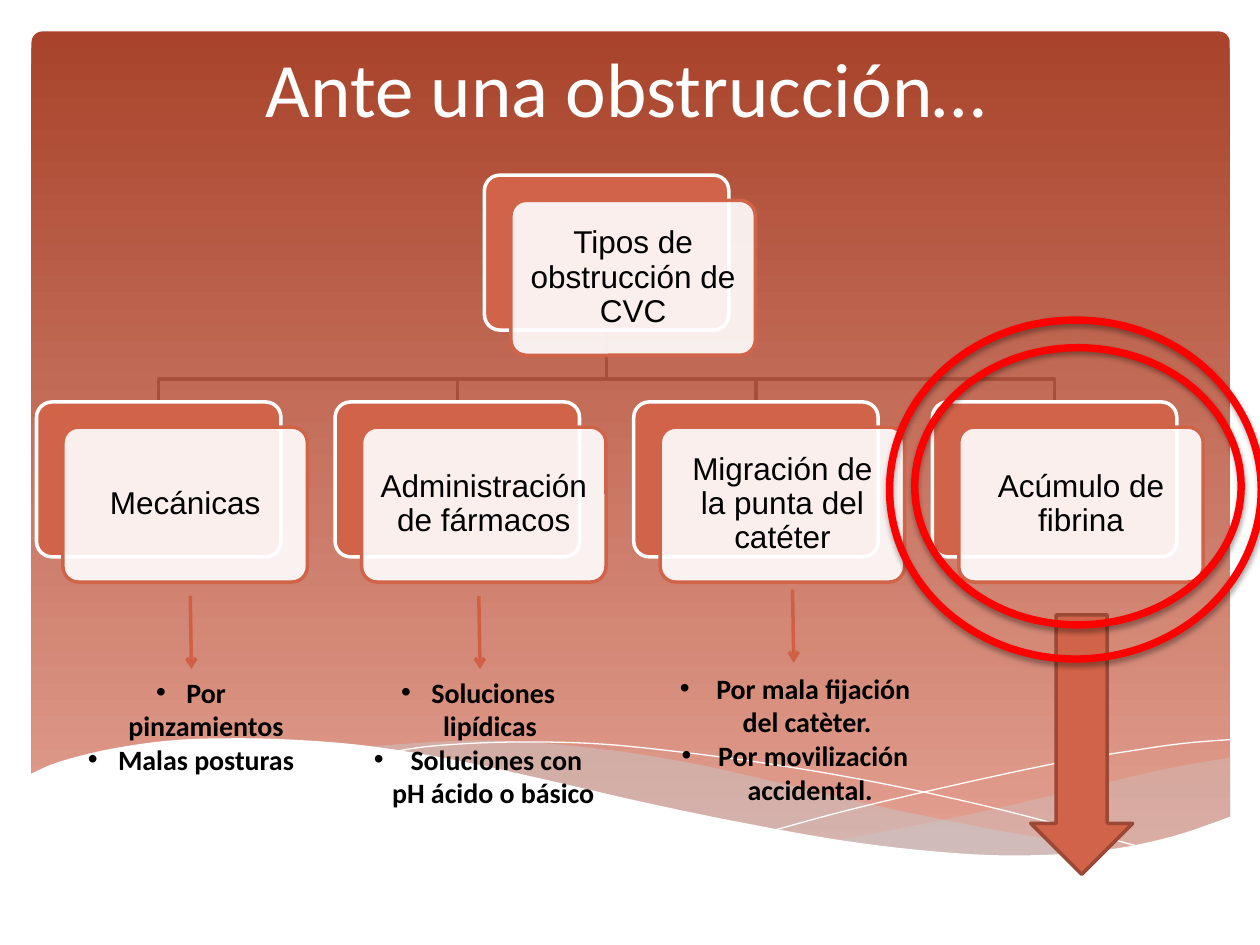
from lxml import etree
from pptx import Presentation, util as u
from pptx.dml.color import RGBColor
from pptx.enum import shapes, text
from pptx.oxml import parse_xml
from pptx.oxml.ns import nsdecls, qn

C = {"top": "A9432B", "bottom": "E3A192", "wave": "C5D1D7", "white": "FFFFFF",
     "black": "000000", "accent": "D16349", "tree": "A74F3A", "edge": "9B4936",
     "arrow": "D05F44", "red": "FF0000"}
W, H = 10, 7.5
PITCH, BOX_W, BOX_H = 2.37, 1.94, 1.23     # grid of the tree
LEFT, ROOT_Y, ROW_Y = 0.29, 1.39, 3.19
MID = text.MSO_ANCHOR.MIDDLE
CENTER = text.PP_ALIGN.CENTER
ROUND = shapes.MSO_SHAPE.ROUNDED_RECTANGLE


def rgb(name):
    return RGBColor.from_string(C[name])


def style(sp, fill=None, line=None, width=2, alpha=None):
    """Set fill and outline, and drop the theme shadow."""
    sp.shadow.inherit = False
    if fill:
        sp.fill.solid()
        sp.fill.fore_color.rgb = rgb(fill)
        if alpha:
            color = sp.element.spPr.find(qn("a:solidFill"))[0]
            etree.SubElement(color, qn("a:alpha"), val=str(alpha * 1000))
    else:
        sp.fill.background()
    if line:
        sp.line.color.rgb = rgb(line)
        sp.line.width = u.Pt(width)
    else:
        sp.line.fill.background()


def add_shape(s, kind, box, **look):
    sp = s.shapes.add_shape(kind, *map(u.Inches, box))
    style(sp, **look)
    return sp


def add_run(p, words, size, font, color, bold=False):
    r = p.add_run()
    r.text = words
    r.font.size, r.font.name, r.font.bold = u.Pt(size), font, bold
    r.font.color.rgb = rgb(color)


def add_path(s, pts, close=False, **look):
    pts = [(u.Inches(x), u.Inches(y)) for x, y in pts]
    fb = s.shapes.build_freeform(*pts[0])
    fb.add_line_segments(pts[1:], close=close)
    style(fb.convert_to_shape(), **look)


def smooth(knots, steps=6):
    """Catmull-Rom curve through the knots."""
    k = [knots[0], *knots, knots[-1]]
    pts = [knots[0]]
    for a, b, c, d in zip(k, k[1:], k[2:], k[3:]):
        for i in range(1, steps + 1):
            t = i / steps
            pts.append(tuple(
                (2 * q + (v - o) * t + (2 * o - 5 * q + 4 * v - w) * t ** 2
                 + (3 * q - o - 3 * v + w) * t ** 3) / 2
                for o, q, v, w in zip(a, b, c, d)))
    return pts


def backdrop(s, box):
    panel = add_shape(s, ROUND, box)
    panel.adjustments[0] = 0.013
    panel.fill.gradient()
    panel.fill.gradient_angle = 270
    for stop, name in zip(panel.fill.gradient_stops, ("top", "bottom")):
        stop.color.rgb = rgb(name)

    # Translucent waves
    right = (smooth([(9.77, 6.01), (9.22, 6.11), (8.62, 6.25), (7.8, 6.44), (7.07, 6.59), (6.62, 6.67)])
             + smooth([(6.62, 6.67), (7.19, 6.74), (7.7, 6.79), (8.15, 6.8), (8.64, 6.77), (9.14, 6.69), (9.77, 6.49)]))
    add_path(s, right, True, fill="wave", alpha=29)
    middle = (smooth([(8.94, 6.75), (8.08, 6.62), (7.07, 6.42), (6.3, 6.24), (5.55, 6.07), (4.89, 5.96),
                      (4.2, 5.89), (3.62, 5.88), (2.87, 5.93)])
              + smooth([(2.87, 5.93), (3.63, 6.05), (4.5, 6.24), (5.3, 6.42), (6.02, 6.57), (6.81, 6.7),
                        (7.49, 6.78), (8.08, 6.8), (8.49, 6.79), (8.94, 6.75)]))
    add_path(s, middle, True, fill="wave", alpha=40)

    # Hairlines
    for knots in ([(3.1, 5.97), (3.44, 5.92), (4.02, 5.89), (4.69, 5.9), (5.33, 5.96), (6.09, 6.06),
                   (6.96, 6.21), (7.96, 6.43), (9.08, 6.73)],
                  [(6.14, 6.59), (6.73, 6.43), (7.49, 6.25), (8.37, 6.06), (8.97, 5.96), (9.39, 5.9), (9.76, 5.87)]):
        add_path(s, smooth(knots), line="white", width=0)

    # White foreground wave
    crest = smooth([(9.77, 6.48), (9.3, 6.64), (8.75, 6.75), (8.09, 6.79), (7.44, 6.76), (6.68, 6.67),
                    (5.79, 6.51), (5.03, 6.35), (4.47, 6.22), (3.65, 6.04), (2.92, 5.92), (2.3, 5.87),
                    (1.77, 5.86), (1.32, 5.88), (0.85, 5.95), (0.46, 6.05), (0.23, 6.15)])
    add_path(s, crest + [(0.23, 7.31), (9.77, 7.31)], True, fill="white")


def node(s, x, y, words):
    """A card in front of an offset coloured card."""
    back = add_shape(s, ROUND, (x, y, BOX_W, BOX_H), fill="accent", line="white")
    front = add_shape(s, ROUND, (x + 0.21, y + 0.2, BOX_W, BOX_H),
                      fill="white", alpha=90, line="accent")
    for sp in (back, front):
        sp.adjustments[0] = 0.1
    tf = front.text_frame
    tf.word_wrap, tf.vertical_anchor = True, MID
    tf.margin_left = tf.margin_right = u.Inches(0.1)
    p = tf.paragraphs[0]
    p.alignment, p.line_spacing = CENTER, 0.9
    add_run(p, words, 18, "Arial", "black")


def tree(s, root, children):
    root_x = LEFT + PITCH * (len(children) - 1) / 2
    lefts = [LEFT + i * PITCH for i in range(len(children))]
    stem = root_x + BOX_W / 2
    for x in reversed(lefts):
        mid = x + BOX_W / 2
        add_path(s, [(stem, ROOT_Y + BOX_H), (stem, 3.01), (mid, 3.01), (mid, ROW_Y)], line="tree")
    node(s, root_x, ROOT_Y, root)
    for x, words in zip(lefts, children):
        node(s, x, ROW_Y, words)


def title(s, words, box):
    sp = s.shapes.title
    sp.left, sp.top, sp.width, sp.height = map(u.Inches, box)
    sp.element.getparent().append(sp.element)     # in front of the backdrop
    tf = sp.text_frame
    tf.vertical_anchor = MID
    p = tf.paragraphs[0]
    p.alignment = CENTER
    add_run(p, words, 44, "Calibri", "white")


def ring(s, box):
    sp = add_shape(s, shapes.MSO_SHAPE.OVAL, box, line="red", width=4.25)
    effects = sp.element.spPr.find(qn("a:effectLst"))
    effects.append(parse_xml(
        f'<a:outerShdw {nsdecls("a")} blurRad="{u.Pt(3.1)}" dist="{u.Pt(1.8)}" dir="5400000" rotWithShape="0">'
        f'<a:srgbClr val="{C["black"]}"><a:alpha val="35000"/></a:srgbClr></a:outerShdw>'))


def bullets(s, box, items):
    tf = s.shapes.add_textbox(*map(u.Inches, box)).text_frame
    tf.word_wrap = True
    for i, words in enumerate(items):
        p = tf.add_paragraph() if i else tf.paragraphs[0]
        p.alignment = CENTER
        pPr = p._p.get_or_add_pPr()
        pPr.set("marL", str(u.Inches(0.24)))
        pPr.set("indent", str(-u.Inches(0.24)))
        etree.SubElement(pPr, qn("a:buFont"), typeface="Arial")
        etree.SubElement(pPr, qn("a:buChar"), char="•")
        add_run(p, words, 16, "Calibri", "black", True)


def down_line(s, x, y):
    cx = s.shapes.add_connector(shapes.MSO_CONNECTOR.STRAIGHT,
                                *map(u.Inches, (x, y, x + 0.01, y + 0.58)))
    cx.line.color.rgb, cx.line.width = rgb("arrow"), u.Pt(2)
    etree.SubElement(cx.line._get_or_add_ln(), qn("a:tailEnd"), type="arrow")
    etree.SubElement(cx._element.spPr, qn("a:effectLst"))


def main():
    prs = Presentation()
    prs.slide_width, prs.slide_height = u.Inches(W), u.Inches(H)
    s = prs.slides.add_slide(prs.slide_layouts[5])
    backdrop(s, (0.25, 0.25, 9.51, 6.6))
    tree(s, "Tipos de obstrucción de CVC",
         ["Mecánicas", "Administración de fármacos",
          "Migración de la punta del catéter", "Acúmulo de fibrina"])
    add_shape(s, shapes.MSO_SHAPE.DOWN_ARROW, (8.18, 4.88, 0.81, 2.06), fill="accent", line="edge")
    title(s, "Ante una obstrucción…", (0.47, 0, 9, 1.37))

    # Emphasis on the last cause
    for box in ((7.26, 2.76, 2.59, 2.2), (7.06, 2.54, 2.95, 2.69)):
        ring(s, box)

    # Details under the first three causes
    for box, items in (
            ((0.54, 5.31, 1.95, 0.9), ["Por pinzamientos", "Malas posturas"]),
            ((5.14, 5.28, 2.34, 1.2), [" Por mala fijación del catèter. ", " Por movilización accidental."]),
            ((2.73, 5.31, 2.13, 0.9), ["Soluciones lipídicas ", " Soluciones con pH ácido o básico"])):
        bullets(s, box, items)
    for x, y in ((1.51, 4.73), (3.8, 4.73), (6.29, 4.68)):
        down_line(s, x, y)
    prs.save("out.pptx")


if __name__ == "__main__":
    main()
